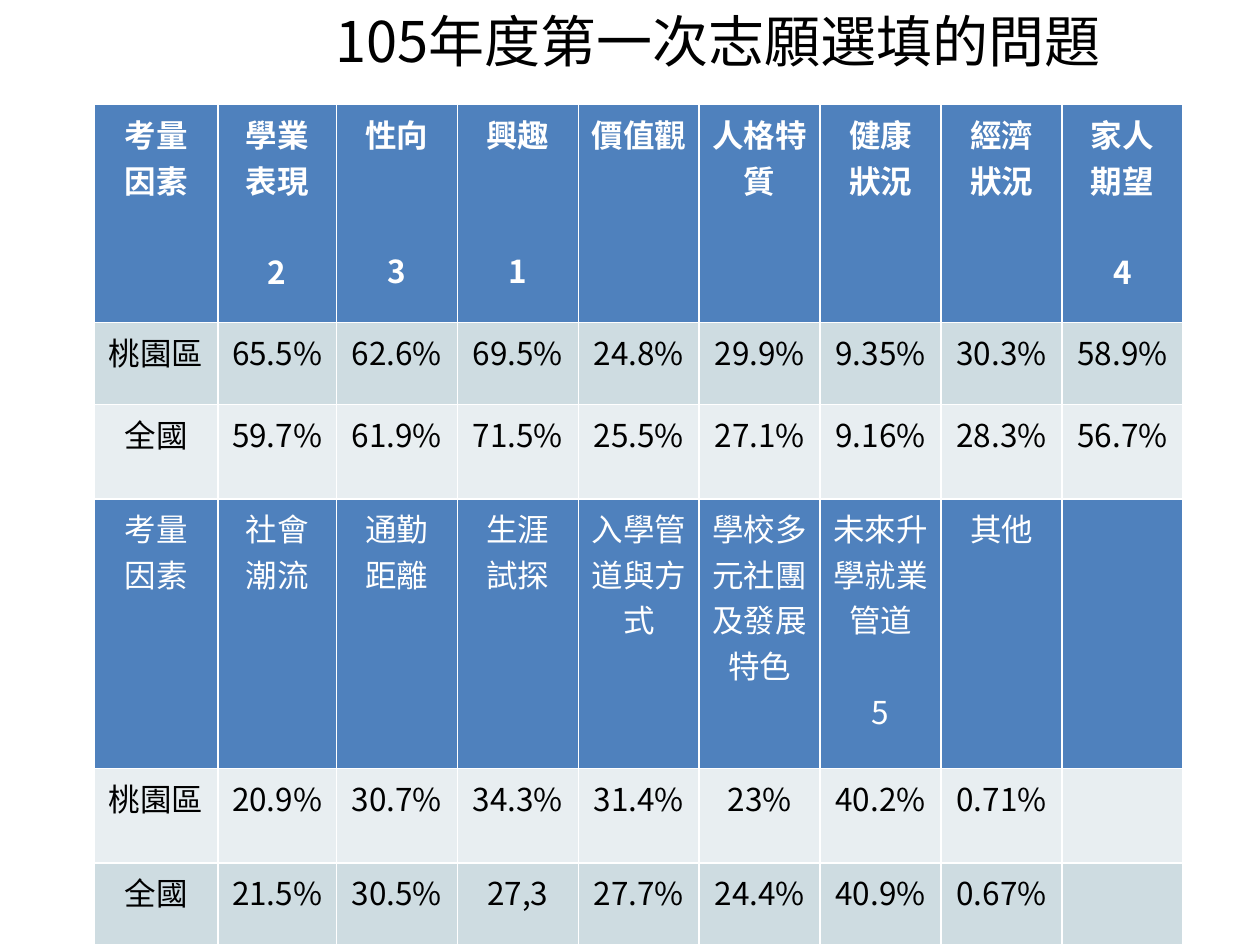
"""Build the slide comparing the factors students weigh when choosing schools."""
from lxml import etree
from pptx import Presentation
from pptx.dml.color import RGBColor
from pptx.enum.text import MSO_ANCHOR, MSO_AUTO_SIZE, PP_ALIGN
from pptx.oxml.ns import qn
from pptx.util import Inches, Pt

LEFT, CENTER = PP_ALIGN.LEFT, PP_ALIGN.CENTER
MIDDLE = MSO_ANCHOR.MIDDLE
GROW = MSO_AUTO_SIZE.SHAPE_TO_FIT_TEXT
FONT = "Noto Sans CJK SC"
LINE_HEIGHT = 26
BLUE, DARK, LIGHT = "4F81BD", "CEDCE1", "E8EEF1"
WHITE, BLACK = "FFFFFF", "000000"


def color(hex_text):
    return RGBColor.from_string(hex_text)


def format_para(para, size, hex_text, align, bold=False):
    para.alignment = align
    para.font.size = Pt(size)
    para.font.bold = bold
    para.font.color.rgb = color(hex_text)
    para.font.name = FONT
    defaults = para._p.pPr.find(qn("a:defRPr"))
    etree.SubElement(defaults, qn("a:ea")).set("typeface", FONT)


deck = Presentation()
deck.slide_width, deck.slide_height = Inches(10), Inches(7.5)
page = deck.slides.add_slide(deck.slide_layouts[5])

title = page.shapes.title
title.left, title.top = Inches(2.56), Inches(0)
title.width, title.height = Inches(6.46), Inches(0.63)
title.text_frame.text = "105年度第一次志願選填的問題"
title.text_frame.vertical_anchor = MIDDLE
title.text_frame.auto_size = GROW
format_para(title.text_frame.paragraphs[0], 32, BLACK, LEFT)

rows = [
    (1.73, BLUE, WHITE, ["考量\n因素", "學業表現\n2", "性向\n3", "興趣\n1", "價值觀", "人格特質",
                         "健康\n狀況", "經濟\n狀況", "家人\n期望\n4"]),
    (0.65, DARK, BLACK, ["桃園區", "65.5%", "62.6%", "69.5%", "24.8%", "29.9%", "9.35%", "30.3%", "58.9%"]),
    (0.75, LIGHT, BLACK, ["全國", "59.7%", "61.9%", "71.5%", "25.5%", "27.1%", "9.16%", "28.3%", "56.7%"]),
    (2.14, BLUE, WHITE, ["考量\n因素", "社會潮流", "通勤\n距離", "生涯\n試探", "入學管道與方式",
                         "學校多元社團及發展特色", "未來升學就業管道\n5", "其他", ""]),
    (0.75, LIGHT, BLACK, ["桃園區", "20.9%", "30.7%", "34.3%", "31.4%", "23%", "40.2%", "0.71%", ""]),
    (0.65, DARK, BLACK, ["全國", "21.5%", "30.5%", "27,3", "27.7%", "24.4%", "40.9%", "0.67%", ""]),
]
widths = [0.98, 0.94] + [0.96] * 7

table = page.shapes.add_table(len(rows), len(widths), Inches(0.75), Inches(0.83),
                              Inches(sum(widths)), Inches(6.67)).table
for column, width in zip(table.columns, widths):
    column.width = Inches(width)

for row_index, (height, fill, text_color, texts) in enumerate(rows):
    table.rows[row_index].height = Inches(height)
    for column_index, text in enumerate(texts):
        cell = table.cell(row_index, column_index)
        cell.fill.solid()
        cell.fill.fore_color.rgb = color(fill)
        cell.text = text
        for para in cell.text_frame.paragraphs:
            if para.text.isdigit():
                blank_lines = 2 if text.startswith(("性向", "興趣")) else 1
                para.space_before = Pt(blank_lines * LINE_HEIGHT)
            format_para(para, 18, text_color, CENTER, bold=row_index == 0)

deck.save("out.pptx")
